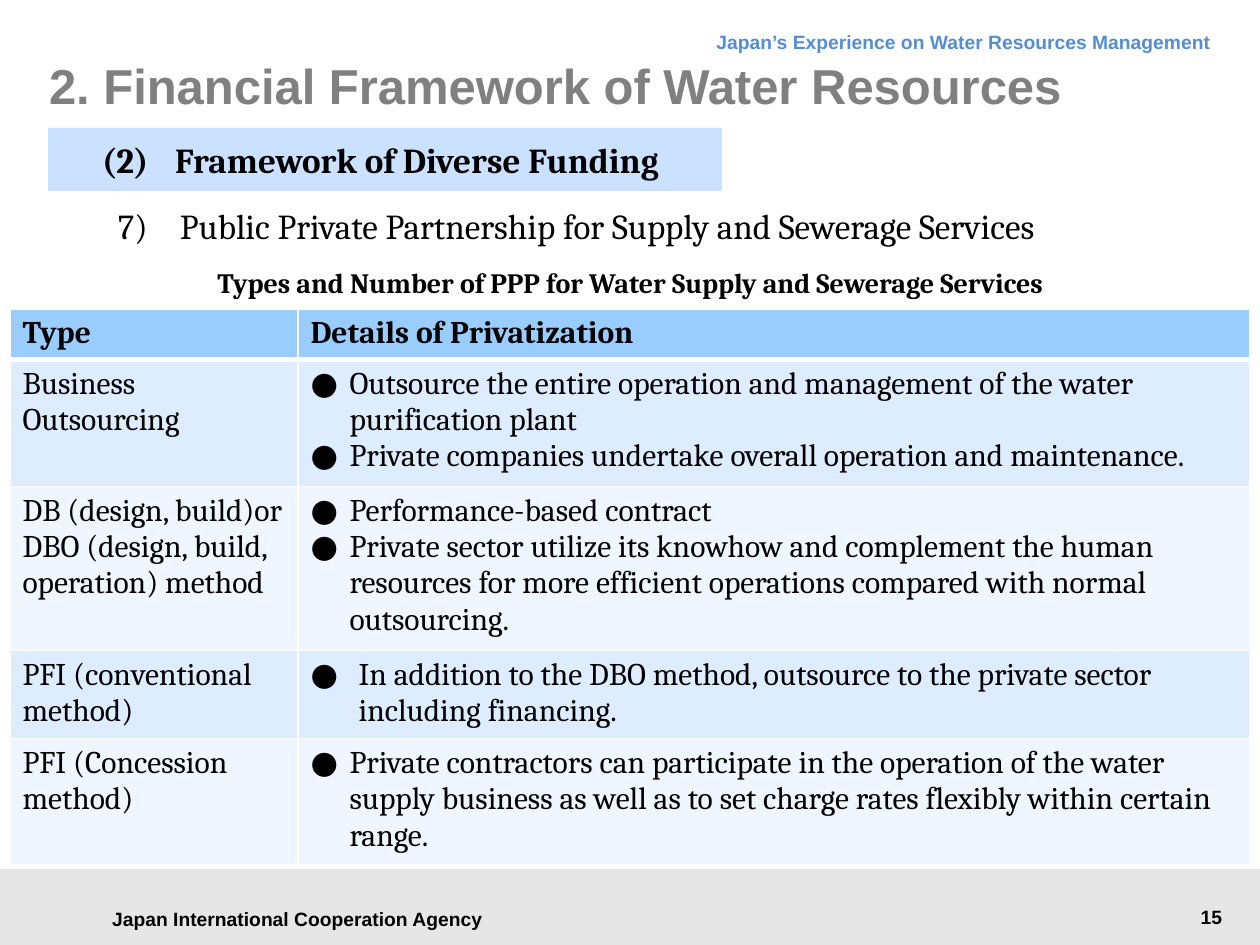
from lxml.etree import SubElement as Sub
from pptx import Presentation
from pptx.dml.color import RGBColor
from pptx.enum.shapes import MSO_SHAPE as Shape
from pptx.enum.text import MSO_ANCHOR as Anchor, PP_ALIGN as Align
from pptx.oxml.ns import qn
from pptx.util import Emu, Pt

SCALE = 914400 / 126
HEAD = "Type", ["Details of Privatization"]
ROWS = [
    ("Business Outsourcing", [
        "Outsource the entire operation and management of the water "
        "purification plant",
        "Private companies undertake overall operation and maintenance."]),
    ("DB (design, build)or DBO (design, build, operation) method", [
        "Performance-based contract",
        "Private sector utilize its knowhow and complement the human "
        "resources for more efficient operations compared with normal "
        "outsourcing."]),
    ("PFI (conventional method)", [
        "In addition to the DBO method, outsource to the private sector "
        "including financing."]),
    ("PFI (Concession method)", [
        "Private contractors can participate in the operation of the water "
        "supply business as well as to set charge rates flexibly within "
        "certain range."]),
]
WIDE = 48  # bullet indent of the conventional PFI row
NEAR = 39  # bullet indent of the other rows


def px(n):
    return Emu(round(n * SCALE))


def color(code):
    return RGBColor.from_string(code)


def paint(fill, code):
    fill.solid()
    fill.fore_color.rgb = color(code)


def write(par, text, size, name="Cambria", hue="000000", bold=False,
          indent=0, bullet=False, **form):
    """Fill one paragraph; form holds paragraph attributes."""
    props = par._p.get_or_add_pPr()
    for key, value in form.items():
        setattr(par, key, value)
    if indent:
        props.set("marL", str(px(indent)))
        props.set("indent", str(-px(indent)))
    if bullet:
        Sub(props, qn("a:buFont"), typeface=name)
        Sub(props, qn("a:buChar"), char="●")
    run = par.add_run()
    run.text = text
    for key, value in dict(size=Pt(size), name=name, bold=bold).items():
        setattr(run.font, key, value)
    run.font.color.rgb = color(hue)


def frame(shape, anchor=Anchor.TOP, inset=(13, 6, 13, 6)):
    body = shape.text_frame
    body.word_wrap = True
    body.vertical_anchor = anchor
    sides = "left", "top", "right", "bottom"
    for side, gap in zip(sides, inset):
        setattr(body, "margin_" + side, px(gap))
    return body.paragraphs[0]


def label(slide, box, text, size, anchor=Anchor.TOP,
          inset=(13, 6, 13, 6), **form):
    shape = slide.shapes.add_textbox(*map(px, box))
    write(frame(shape, anchor, inset), text, size, **form)


def block(slide, box, hue):
    shape = slide.shapes.add_shape(Shape.RECTANGLE, *map(px, box))
    shape.shadow.inherit = False
    paint(shape.fill, hue)
    shape.line.fill.background()
    return shape


def footer(slide, x, y, w, h):
    block(slide, (x, y, w, h), "E6E6E6")
    form = dict(size=11, name="Arial", bold=True)
    label(slide, (x + 89, y + 28, 417, 43),
          "Japan International Cooperation Agency",
          anchor=Anchor.MIDDLE, alignment=Align.CENTER, **form)
    label(slide, (x + w - 223, y + 30, 198, 37), "15",
          alignment=Align.RIGHT, **form)


def header(slide, x, y, w, h):
    label(slide, (x + 294, y, 881, 48),
          "Japan’s Experience on Water Resources Management", 11,
          name="Arial", hue="548DD4", bold=True,
          alignment=Align.RIGHT, line_spacing=Pt(18))
    title = slide.shapes.title
    spot = dict(left=x, top=y + 19, width=w, height=h - 19)
    for key, value in spot.items():
        setattr(title, key, px(value))
    write(frame(title, Anchor.MIDDLE, (0, 0, 0, 0)),
          "2. Financial Framework of Water Resources", 28, name="Arial",
          hue="808080", bold=True, alignment=Align.LEFT)


def topic(slide, x, y, w, h):
    band = block(slide, (x, y, w, 63), "CAE2FF")
    write(frame(band, Anchor.MIDDLE, (54, 10, 44, 10)),
          "(2)\tFramework of Diverse Funding", 20, bold=True, indent=73,
          alignment=Align.LEFT)
    label(slide, (x + 57, y + 70, 1095, 55),
          "7)\tPublic Private Partnership for Supply and Sewerage Services",
          20, indent=62)
    label(slide, (x + 141, y + h - 28, 883, 28),
          "Types and Number of PPP for Water Supply and Sewerage Services",
          16, inset=(0, 0, 0, 0), bold=True, alignment=Align.CENTER,
          line_spacing=Pt(16))


def edge(cell, thick):
    """White borders; thick is the weight of the bottom one."""
    props = cell._tc.get_or_add_tcPr()
    for side, wide in zip("LRTB", (1, 1, 1, thick)):
        line = Sub(props, qn("a:ln" + side), w=str(Pt(wide)))
        Sub(Sub(line, qn("a:solidFill")), qn("a:srgbClr"), val="FFFFFF")


def grid(slide, x, y, w, h):
    tall = [49, 127, 164, 88]
    tall.append(h - sum(tall))
    table = slide.shapes.add_table(
        len(tall), 2, *map(px, (x, y, w, h))).table
    for col, wide in zip(table.columns, (288, w - 288)):
        col.width = px(wide)
    for r, (kind, notes) in enumerate([HEAD] + ROWS):
        table.rows[r].height = px(tall[r])
        top = r == 0
        hue = "99CCFF" if top else ("EFF6FF", "DEECFF")[r % 2]
        for c, lines in enumerate(([kind], notes)):
            cell = table.cell(r, c)
            edge(cell, 3 if top else 1)
            paint(cell.fill, hue)
            mark = c == 1 and not top
            step = (WIDE if r == 3 else NEAR) if mark else 0
            body = cell.text_frame
            for i, line in enumerate(lines):
                par = body.add_paragraph() if i else body.paragraphs[0]
                write(par, line, 18, bold=top, indent=step, bullet=mark)


def main():
    deck = Presentation()
    deck.slide_width, deck.slide_height = px(1260), px(945)
    slide = deck.slides.add_slide(deck.slide_layouts[5])
    footer(slide, 0, 869, 1260, 76)
    header(slide, 49, 16, 1134, 119)
    topic(slide, 48, 128, 674, 171)
    grid(slide, 10, 309, 1240, 554)
    deck.save("out.pptx")


if __name__ == "__main__":
    main()
